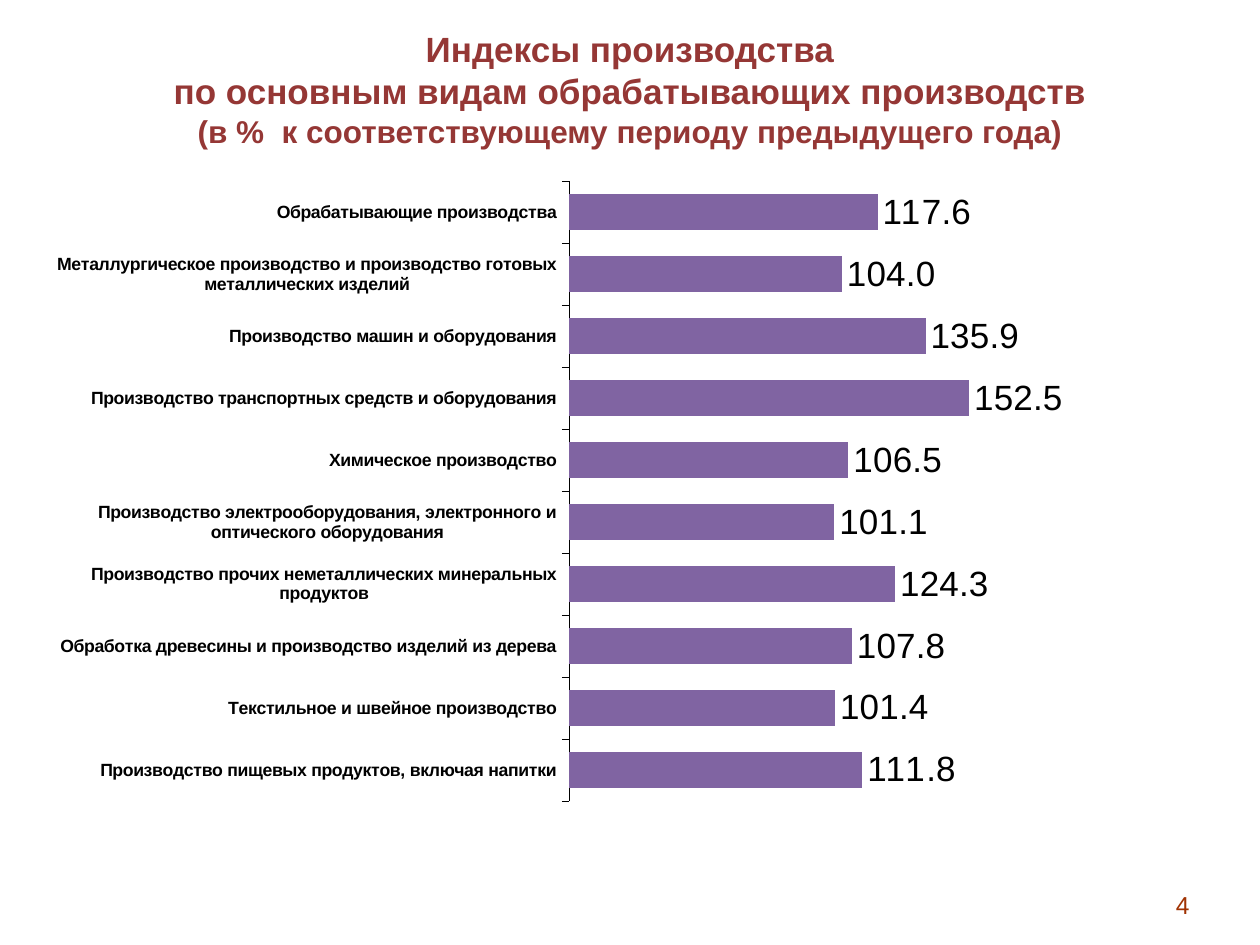
from lxml import etree
from pptx import Presentation
from pptx.chart.data import CategoryChartData
from pptx.dml.color import RGBColor
from pptx.enum.chart import XL_CHART_TYPE, XL_LABEL_POSITION, XL_TICK_MARK
from pptx.enum.text import MSO_ANCHOR, PP_ALIGN
from pptx.oxml.ns import qn
from pptx.util import Cm, Pt

BROWN_RED = RGBColor(0x95, 0x37, 0x35)
RUST = RGBColor(0xA0, 0x32, 0x02)
PURPLE = RGBColor(0x80, 0x64, 0xA2)
BLACK = RGBColor(0, 0, 0)
FONT = "Arial"

INDICES = [
    ("Производство пищевых продуктов, включая напитки", 111.8),
    ("Текстильное и швейное производство", 101.4),
    ("Обработка древесины и производство изделий из дерева", 107.8),
    ("Производство прочих неметаллических минеральных продуктов", 124.3),
    ("Производство электрооборудования, электронного и оптического оборудования", 101.1),
    ("Химическое производство", 106.5),
    ("Производство транспортных средств и оборудования", 152.5),
    ("Производство машин и оборудования", 135.9),
    ("Металлургическое производство и производство готовых металлических изделий", 104.0),
    ("Обрабатывающие производства", 117.6),
]


def style_font(font, size, color, bold=False):
    font.name = FONT
    font.size = Pt(size)
    font.bold = bold
    font.color.rgb = color


def add_run(paragraph, text, size, color, bold=False):
    run = paragraph.add_run()
    run.text = text
    style_font(run.font, size, color, bold)


presentation = Presentation()
presentation.slide_width = Cm(25.4)
presentation.slide_height = Cm(19.05)
slide = presentation.slides.add_slide(presentation.slide_layouts[6])

# Title
title = slide.shapes.add_textbox(Cm(0), Cm(0.43), Cm(25.4), Cm(2.82))
title.text_frame.word_wrap = True
paragraph = title.text_frame.paragraphs[0]
paragraph.alignment = PP_ALIGN.CENTER
add_run(paragraph, "Индексы производства", 20, BROWN_RED, True)
paragraph = title.text_frame.add_paragraph()
paragraph.alignment = PP_ALIGN.CENTER
add_run(paragraph, "по основным видам обрабатывающих производств", 20, BROWN_RED, True)
paragraph.add_line_break()
add_run(paragraph, "(в %  к соответствующему периоду предыдущего года)", 18, BROWN_RED, True)

# Bar chart of the production indices
chart_data = CategoryChartData(number_format="0.0")
chart_data.categories = [name for name, value in INDICES]
chart_data.add_series("Индекс производства", [value for name, value in INDICES])
chart = slide.shapes.add_chart(
    XL_CHART_TYPE.BAR_CLUSTERED, Cm(1.02), Cm(3.12), Cm(23.39), Cm(14.12), chart_data
).chart
chart.has_legend = False
chart.has_title = False
style_font(chart.font, 20, BLACK)

# Axes
category_axis = chart.category_axis
category_axis.major_tick_mark = XL_TICK_MARK.OUTSIDE
category_axis.format.line.color.rgb = BLACK
category_axis.format.line.width = Pt(0.32)
style_font(category_axis.tick_labels.font, 10.1, BLACK, True)
value_axis = chart.value_axis
value_axis.minimum_scale = 0
value_axis.maximum_scale = 215
value_axis.has_major_gridlines = False
value_axis.visible = False

# Bars and their values
plot = chart.plots[0]
plot.gap_width = 72
plot.overlap = -18
plot.vary_by_categories = False
bars = plot.series[0].format
bars.fill.solid()
bars.fill.fore_color.rgb = PURPLE
bars.line.fill.background()
plot.has_data_labels = True
labels = plot.data_labels
labels.show_value = True
labels.number_format = "#,##0.0"
labels.number_format_is_linked = False
labels.position = XL_LABEL_POSITION.OUTSIDE_END
style_font(labels.font, 20, BLACK)

# Inner plot area, as shares of the chart
plot_area = chart.plots._plotArea
for old_layout in plot_area.findall(qn("c:layout")):
    plot_area.remove(old_layout)
layout = etree.Element(qn("c:layout"))
manual_layout = etree.SubElement(layout, qn("c:manualLayout"))
for tag, value in [
    ("layoutTarget", "inner"), ("xMode", "edge"), ("yMode", "edge"),
    ("x", "0.447"), ("y", "0.038"), ("w", "0.486"), ("h", "0.885"),
]:
    etree.SubElement(manual_layout, qn(f"c:{tag}")).set("val", value)
plot_area.insert(0, layout)

# Page number
page_number = slide.shapes.add_textbox(Cm(21.31), Cm(17.73), Cm(2.92), Cm(1.02))
page_number.text_frame.word_wrap = True
page_number.text_frame.vertical_anchor = MSO_ANCHOR.MIDDLE
paragraph = page_number.text_frame.paragraphs[0]
paragraph.alignment = PP_ALIGN.RIGHT
add_run(paragraph, "4", 14, RUST)

presentation.save("out.pptx")
